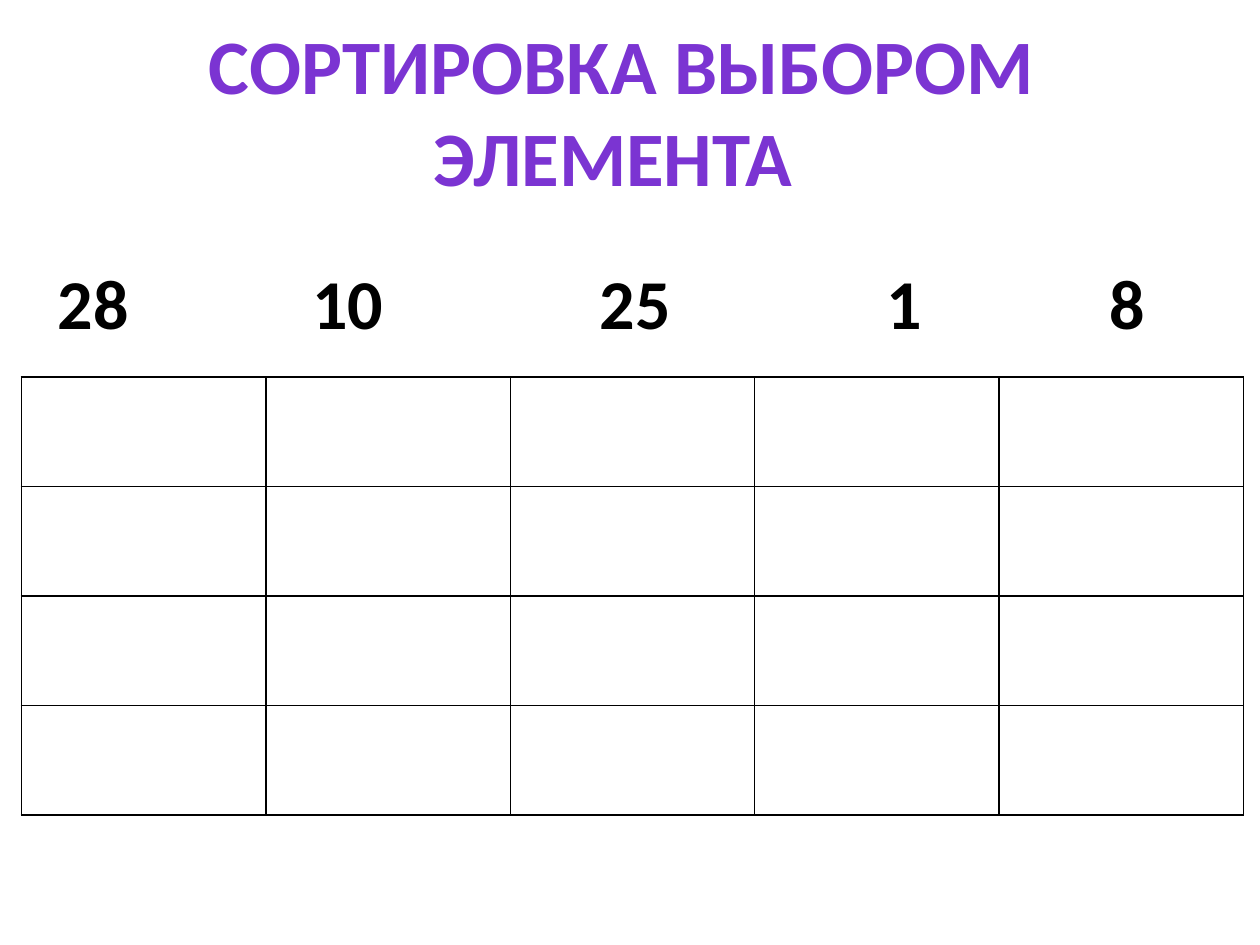
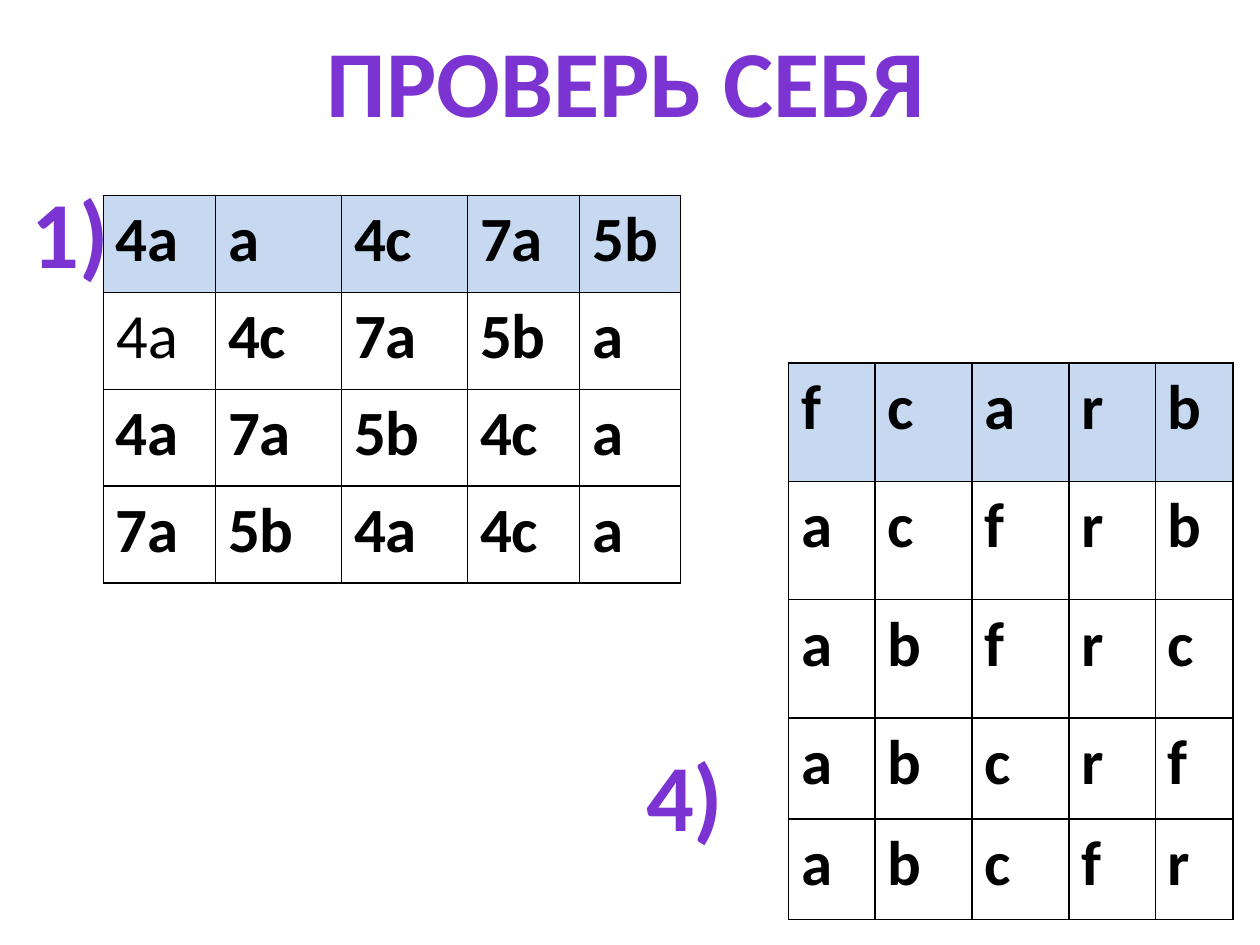
import pptx
import pptx.util
import pptx.dml.color
import pptx.enum.text
import pptx.oxml
import pptx.oxml.ns
from lxml import etree

Inches, Pt = pptx.util.Inches, pptx.util.Pt
RGBColor = pptx.dml.color.RGBColor
ALIGN = pptx.enum.text.PP_ALIGN

# Shared look
FONT = "Calibri"
BLACK = RGBColor(0x00, 0x00, 0x00)
HEADER_BLUE = RGBColor(0xC6, 0xD9, 0xF1)
OUTLINE = RGBColor(0x5E, 0x45, 0x7C)
PURPLE_STOPS = [
    (0, RGBColor(0x3D, 0x1B, 0x67)),
    (43, RGBColor(0x7B, 0x34, 0xD2)),
    (48, RGBColor(0x73, 0x30, 0xC4)),
    (100, RGBColor(0x3D, 0x1B, 0x67)),
]
SLIDE_W, SLIDE_H = 10, 7.5

# Content
SORTING_TITLE = "СОРТИРОВКА ВЫБОРОМ ЭЛЕМЕНТА "
NUMBERS = ["28", "10", "25", "1", "8"]
NUMBER_STOPS = [0.24, 2.26, 4.54, 6.82, 8.59]
WORKSHEET = [[""] * len(NUMBERS)] * 4

CHECK_TITLE = "ПРОВЕРЬ СЕБЯ"
COLUMN_PATTERN = [0.89, 1, 1, 0.89, 0.8]
ANSWERS = [
    {
        "label": "1)", "label_at": (-0.35, 1.33), "at": (0.82, 1.55),
        "column_scale": 1, "heights": [0.77] * 4, "plain": {(1, 0)},
        "rows": ["4a a 4c 7a 5b", "4a 4c 7a 5b a", "4a 7a 5b 4c a", "7a 5b 4a 4c a"],
    },
    {
        "label": "4)", "label_at": (4.53, 5.8), "at": (6.26, 2.88),
        "column_scale": 0.77, "heights": [0.94] * 3 + [0.8] * 2, "plain": set(),
        "rows": ["f c a r b", "a c f r b", "a b f r c", "a b c r f", "a b c f r"],
    },
]


def write(frame, text, size, bold=True, align=ALIGN.LEFT, purple=False):
    """Put one formatted run into a text frame and return its paragraph."""
    paragraph = frame.paragraphs[0]
    paragraph.alignment = align
    run = paragraph.add_run()
    run.text = text
    run.font.name, run.font.size, run.font.bold = FONT, Pt(size), bold
    if purple:
        paint_purple(run)
    else:
        run.font.fill.solid()
        run.font.fill.fore_color.rgb = BLACK
    return paragraph


def paint_purple(run):
    stops = "".join(
        f'<a:gs pos="{share * 1000}"><a:srgbClr val="{color}"/></a:gs>'
        for share, color in PURPLE_STOPS
    )
    namespace = pptx.oxml.ns.nsdecls("a")
    properties = run.font._element
    properties.insert(0, pptx.oxml.parse_xml(
        f'<a:ln {namespace} w="9000"><a:solidFill><a:srgbClr val="{OUTLINE}"/>'
        "</a:solidFill></a:ln>"))
    properties.insert(1, pptx.oxml.parse_xml(
        f'<a:gradFill {namespace}><a:gsLst>{stops}</a:gsLst>'
        '<a:lin ang="5400000"/></a:gradFill>'))


def add_text(slide, box, text, **style):
    frame = slide.shapes.add_textbox(*map(Inches, box)).text_frame
    frame.word_wrap = True
    frame.auto_size = pptx.enum.text.MSO_AUTO_SIZE.SHAPE_TO_FIT_TEXT
    return write(frame, text, **style)


def add_heading(slide, box, text, size=54):
    add_text(slide, box, text, size=size, align=ALIGN.CENTER, purple=True)


def add_tab_stops(paragraph, stops):
    tabs = etree.SubElement(paragraph._p.get_or_add_pPr(), pptx.oxml.ns.qn("a:tabLst"))
    for stop in stops:
        etree.SubElement(tabs, pptx.oxml.ns.qn("a:tab"),
                         pos=str(Inches(stop)), algn="l")


def add_borders(cell):
    properties = cell._tc.get_or_add_tcPr()
    for side in "LRTB":
        properties.append(pptx.oxml.parse_xml(
            f'<a:ln{side} {pptx.oxml.ns.nsdecls("a")} w="12700"><a:solidFill>'
            f'<a:srgbClr val="{BLACK}"/></a:solidFill></a:ln{side}>'))


def add_grid(slide, at, widths, heights, rows, header=False, plain=()):
    box = (*at, sum(widths), sum(heights))
    table = slide.shapes.add_table(len(heights), len(widths), *map(Inches, box)).table
    table.first_row = table.horz_banding = False
    for column, width in zip(table.columns, widths):
        column.width = Inches(width)
    for r, (height, words) in enumerate(zip(heights, rows)):
        table.rows[r].height = Inches(height)
        for c, word in enumerate(words):
            cell = table.cell(r, c)
            add_borders(cell)
            if header and r == 0:
                cell.fill.solid()
                cell.fill.fore_color.rgb = HEADER_BLUE
            else:
                cell.fill.background()
            if word:
                write(cell.text_frame, word, size=36, bold=(r, c) not in plain)


def build_sorting(slide):
    add_heading(slide, (0.39, 0.09, 9.09, 1.58), SORTING_TITLE, size=44)
    add_grid(slide, (0.17, 2.99), [1.94] * len(NUMBERS), [0.87] * len(WORKSHEET), WORKSHEET)
    numbers = add_text(slide, (0.12, 2.01, 9.88, 0.77),
                       "".join("\t" + number for number in NUMBERS), size=40)
    add_tab_stops(numbers, NUMBER_STOPS)


def build_check(slide):
    add_heading(slide, (-0.03, 0.13, SLIDE_W, 1.01), CHECK_TITLE)
    for answer in ANSWERS:
        widths = [width * answer["column_scale"] for width in COLUMN_PATTERN]
        rows = [row.split() for row in answer["rows"]]
        add_grid(slide, answer["at"], widths, answer["heights"], rows,
                 header=True, plain=answer["plain"])
        add_heading(slide, (*answer["label_at"], 1.81, 1.01), answer["label"])


def main():
    deck = pptx.Presentation()
    deck.slide_width, deck.slide_height = Inches(SLIDE_W), Inches(SLIDE_H)
    for build in (build_sorting, build_check):
        build(deck.slides.add_slide(deck.slide_layouts[6]))
    deck.save("out.pptx")


if __name__ == "__main__":
    main()
